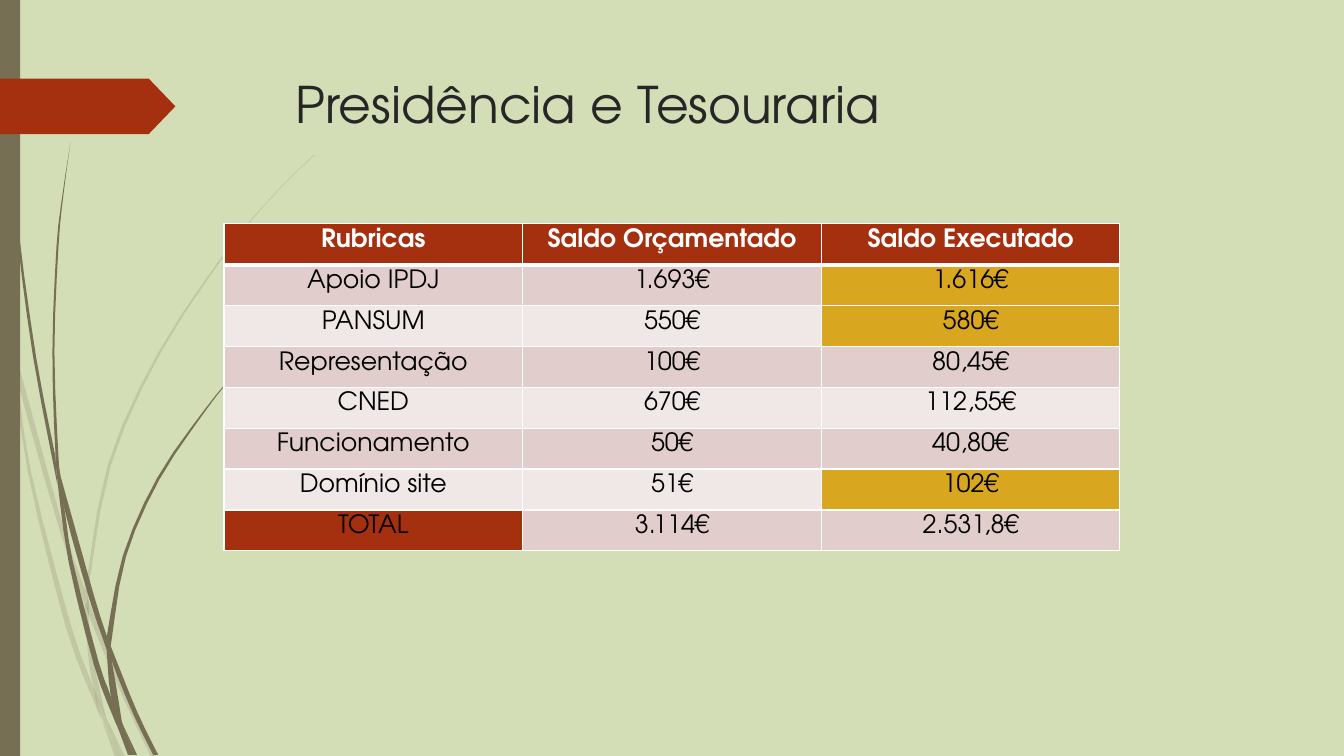
import pptx
import pptx.dml.color
import pptx.enum.shapes
import pptx.enum.text
import pptx.oxml
import pptx.oxml.ns
import pptx.util
from lxml import etree

W, H = 13.333, 7.5
FONT = "TeX Gyre Adventor"
OLIVE, RED, GOLD, WHITE = "766F54", "A53010", "D9A61F", "FFFFFF"
BANDS = ["E1CDCC", "F0E8E7"]
ROWS = [
    ("Rubricas", "Saldo Orçamentado", "Saldo Executado"),
    ("Apoio IPDJ", "1.693€", "1.616€"),
    ("PANSUM", "550€", "580€"),
    ("Representação", "100€", "80,45€"),
    ("CNED", "670€", "112,55€"),
    ("Funcionamento", "50€", "40,80€"),
    ("Domínio site", "51€", "102€"),
    ("TOTAL", "3.114€", "2.531,8€"),
]
HIGHLIGHTS = {(1, 2): GOLD, (2, 2): GOLD, (6, 2): GOLD, (7, 0): RED}

# Each piece of grass is a left and a right edge, from tip to root, in inches.
FAINT_GRASS = [
    ([(0, 2.99), (0.1, 3.44), (0.11, 3.5)], [(0, 2.82), (0.09, 3.22), (0.11, 3.5)]),
    ([(0.14, 3.45), (0.17, 3.76), (0.58, 5.22), (0.84, 5.99)],
     [(0.14, 3.45), (0.62, 5.2), (0.85, 5.86)]),
    ([(0.88, 5.96), (0.88, 6.1), (1.23, 6.94), (1.5, 7.51)],
     [(0.88, 5.96), (0.92, 6.07), (1.27, 6.92), (1.55, 7.51)]),
    ([(1.05, 7.11), (1.19, 7.51)], [(1.05, 7.11), (1.24, 7.51)]),
    ([(0.11, 3.5), (0.28, 4.7), (0.65, 6.21), (0.92, 6.93), (1.01, 7.14)],
     [(0.11, 3.5), (0.17, 3.76), (0.31, 4.69), (0.7, 6.19), (0.93, 6.83), (0.99, 7.07)]),
    ([(0.84, 5.99), (0.87, 6.46), (0.93, 6.83), (1.05, 7.11)],
     [(0.84, 5.99), (0.88, 6.08), (0.91, 6.46), (1.05, 7.11)]),
    ([(3.12, 1.53), (2.89, 1.75), (2.68, 1.97), (2.28, 2.44), (1.58, 3.48), (1.07, 4.61),
      (0.85, 5.84), (0.85, 5.86)],
     [(3.12, 1.54), (2.9, 1.75), (2.68, 1.98), (2.29, 2.45), (1.6, 3.49), (1.1, 4.62),
      (0.88, 5.84), (0.88, 5.96)]),
    ([(1.01, 7.14), (1.14, 7.51)], [(1.01, 7.14), (1.19, 7.51)]),
    ([(0.85, 5.86), (0.84, 5.99)], [(0.85, 5.86), (0.88, 5.96), (0.88, 6.1)]),
    ([(0.93, 6.83), (0.99, 7.07), (1.19, 7.51)], [(0.93, 6.83), (1.05, 7.11), (1.19, 7.51)]),
]
DARK_GRASS = [
    ([(0.03, 0), (0.04, 0.48), (0.07, 1.1), (0.17, 2.33), (0.33, 3.55), (0.57, 4.81)],
     [(0.04, 0), (0.05, 0.48), (0.08, 1.09), (0.19, 2.32), (0.36, 3.55), (0.55, 4.53)]),
    ([(0.6, 4.72), (0.64, 5.05), (0.88, 5.92), (1.06, 6.45)],
     [(0.6, 4.72), (0.93, 5.9), (1.06, 6.31)]),
    ([(1.1, 6.41), (1.11, 6.56), (1.32, 7.08), (1.52, 7.49)],
     [(1.1, 6.41), (1.13, 6.49), (1.36, 7.06), (1.57, 7.49)]),
    ([(0.57, 4.77), (0.68, 5.57), (0.93, 6.59), (1.11, 7.08), (1.17, 7.22)],
     [(0.57, 4.77), (0.64, 5.05), (0.72, 5.56), (0.98, 6.57), (1.1, 6.91), (1.16, 7.17)]),
    ([(0.7, 1.41), (0.62, 1.93), (0.56, 2.45), (0.52, 3.49), (0.55, 4.49), (0.6, 4.72)],
     [(0.7, 1.41), (0.63, 1.93), (0.58, 2.45), (0.54, 3.49), (0.58, 4.53), (0.6, 4.72)]),
    ([(1.22, 7.19), (1.33, 7.49)], [(1.22, 7.19), (1.36, 7.49)]),
    ([(0.55, 4.49), (0.57, 4.77), (0.64, 5.05)], [(0.55, 4.49), (0.6, 4.72), (0.64, 5.05)]),
    ([(2.6, 3.44), (2.31, 3.73), (2.04, 4.05), (1.56, 4.74), (1.22, 5.51), (1.06, 6.31)],
     [(2.61, 3.44), (2.31, 3.74), (2.05, 4.06), (1.58, 4.76), (1.25, 5.52), (1.11, 6.33),
      (1.1, 6.41)]),
    ([(1.17, 7.22), (1.27, 7.49)], [(1.17, 7.22), (1.31, 7.49)]),
    ([(1.06, 6.45), (1.1, 6.91), (1.22, 7.19)], [(1.06, 6.45), (1.11, 6.56), (1.21, 7.16)]),
    ([(1.06, 6.31), (1.06, 6.45), (1.11, 6.56)], [(1.06, 6.31), (1.1, 6.41), (1.11, 6.56)]),
    ([(1.1, 6.91), (1.17, 7.22), (1.3, 7.49)], [(1.1, 6.91), (1.22, 7.19), (1.33, 7.49)]),
]


def inches(*values):
    return [pptx.util.Inches(v) for v in values]


def paint(fill, color):
    fill.solid()
    fill.fore_color.rgb = pptx.dml.color.RGBColor.from_string(color)


def finish(sp, color, opacity=1):
    """Give a shape a flat fill without line or shadow."""
    sp.shadow.inherit = False
    sp.line.fill.background()
    paint(sp.fill, color)
    if opacity < 1:
        clr = sp.fill._xPr.find(".//" + pptx.oxml.ns.qn("a:srgbClr"))
        etree.SubElement(clr, pptx.oxml.ns.qn("a:alpha")).set("val", f"{opacity:.0%}")


def write(tf, text, size, color, bold=False, align=pptx.enum.text.PP_ALIGN.LEFT):
    p = tf.paragraphs[0]
    p.alignment = align
    r = p.add_run()
    r.text = text
    r.font.name, r.font.size, r.font.bold = FONT, pptx.util.Pt(size), bold
    r.font.color.rgb = pptx.dml.color.RGBColor.from_string(color)


def smooth(points, steps=3):
    """Sample a Catmull-Rom curve through the points."""
    if len(points) == 2:
        return points
    ends = [points[0], *points, points[-1]]
    curve = []
    for a, b, c, d in zip(ends, ends[1:], ends[2:], ends[3:]):
        for t in (i / steps for i in range(steps)):
            curve.append(tuple(
                (2 * q + (r - p) * t + (2 * p - 5 * q + 4 * r - s) * t ** 2
                 + (3 * q - p - 3 * r + s) * t ** 3) / 2
                for p, q, r, s in zip(a, b, c, d)))
    return curve + [points[-1]]


def add_grass(slide, left, top, pieces, opacity):
    for left_edge, right_edge in pieces:
        outline = smooth(left_edge) + smooth(right_edge)[::-1]
        mils = [(x * 1000, y * 1000) for x, y in outline]
        fb = slide.shapes.build_freeform(*mils[0], scale=914.4)
        fb.add_line_segments(mils[1:], close=True)
        finish(fb.convert_to_shape(*inches(left, top)), OLIVE, opacity)


def add_decoration(slide, left, top, height):
    add_grass(slide, left, top, FAINT_GRASS, 0.2)
    add_grass(slide, left, top, DARK_GRASS, 1)
    kinds = pptx.enum.shapes.MSO_SHAPE
    bar = slide.shapes.add_shape(kinds.RECTANGLE, *inches(left, top, 0.2, height))
    finish(bar, OLIVE)
    arrow = slide.shapes.add_shape(kinds.PENTAGON, *inches(left, top + 0.78, 1.74, 0.55))
    arrow.adjustments[0] = 0.48
    finish(arrow, RED)


def add_title(slide, left, top, width, height, text):
    title = slide.shapes.title
    title.left, title.top, title.width, title.height = inches(left, top, width, height)
    tf = title.text_frame
    tf.word_wrap = True
    tf.auto_size = pptx.enum.text.MSO_AUTO_SIZE.NONE
    tf.vertical_anchor = pptx.enum.text.MSO_ANCHOR.TOP
    write(tf, text, 36, "262626")


def set_border(cell, side, width):
    cell._tc.get_or_add_tcPr().append(pptx.oxml.parse_xml(
        f'<a:ln{side} {pptx.oxml.ns.nsdecls("a")} w="{width * 12700}"><a:solidFill>'
        f'<a:srgbClr val="{WHITE}"/></a:solidFill></a:ln{side}>'))


def add_budget(slide, left, top, width, height):
    n_rows, n_cols = len(ROWS), len(ROWS[0])
    table = slide.shapes.add_table(n_rows, n_cols, *inches(left, top, width, height)).table
    for row in table.rows:
        row.height = pptx.util.Pt(29.2)
    for i, texts in enumerate(ROWS):
        head = i == 0
        for j, text in enumerate(texts):
            cell = table.cell(i, j)
            for side in "LRTB":
                set_border(cell, side, 3 if (side, i) in (("B", 0), ("T", 1)) else 1)
            band = RED if head else BANDS[(i - 1) % 2]
            paint(cell.fill, HIGHLIGHTS.get((i, j), band))
            write(cell.text_frame, text, 18, WHITE if head else "000000", bold=head,
                  align=pptx.enum.text.PP_ALIGN.CENTER)


def main():
    prs = pptx.Presentation()
    prs.slide_width, prs.slide_height = inches(W, H)
    slide = prs.slides.add_slide(prs.slide_layouts[5])
    paint(slide.background.fill, "D4DEB6")
    add_decoration(slide, 0, 0, H)
    add_title(slide, 2.83, 0.68, 9.75, 1.4, "Presidência e Tesouraria")
    add_budget(slide, W / 6, 2.22, W * 2 / 3, 3.24)
    prs.save("out.pptx")


if __name__ == "__main__":
    main()
